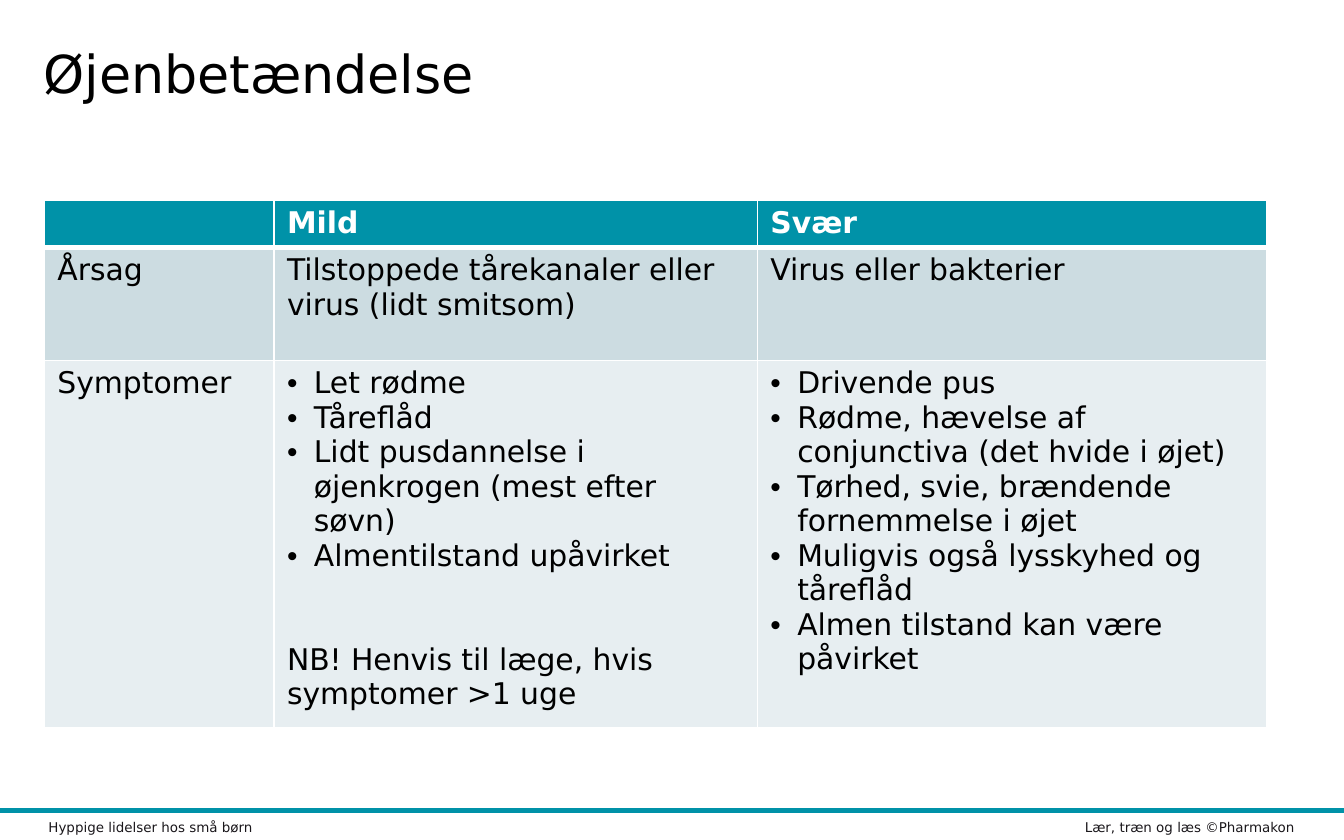
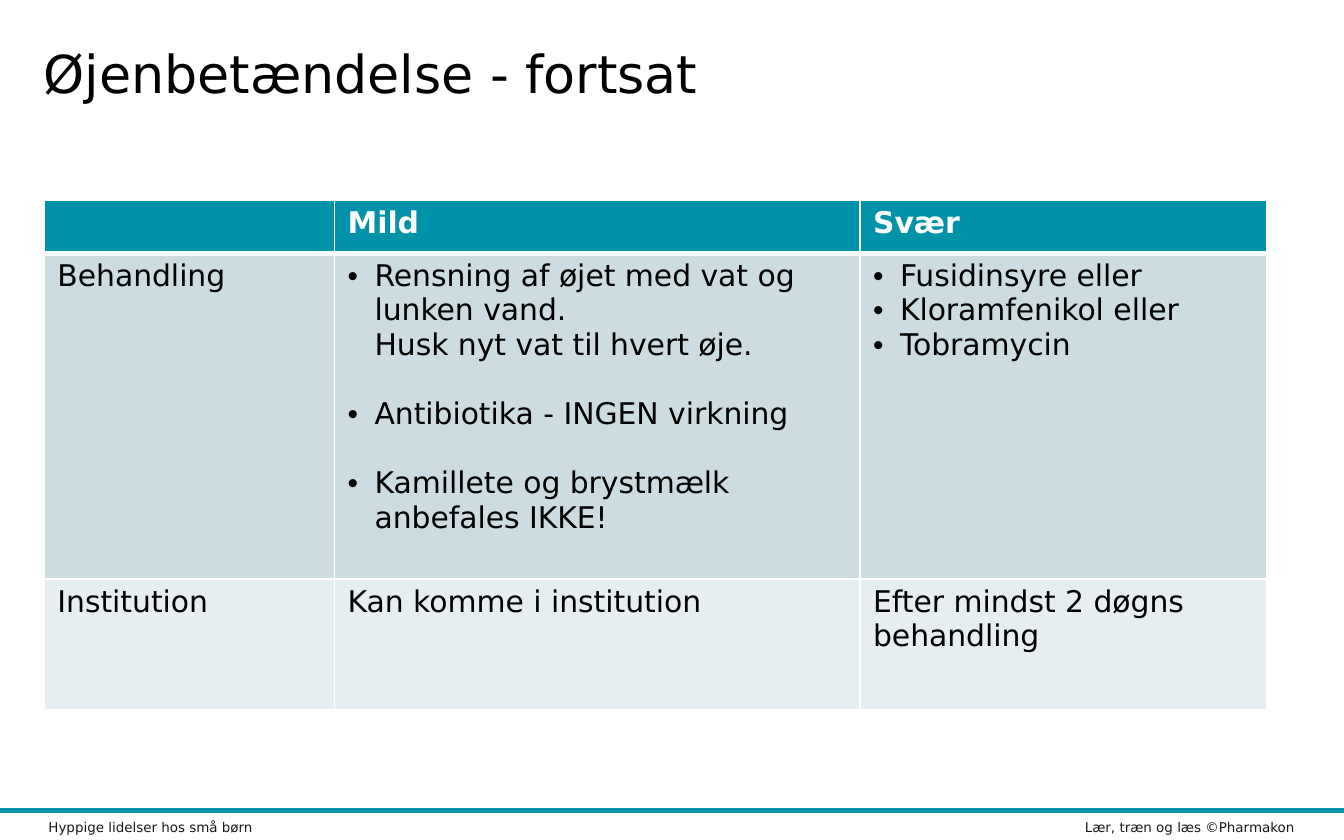
from dataclasses import dataclass

import lxml.etree
import pptx
import pptx.dml.color
import pptx.enum.shapes
import pptx.enum.text
import pptx.oxml.ns
import pptx.util

Pt = pptx.util.Pt
qn = pptx.oxml.ns.qn


@dataclass(frozen=True)
class Theme:
    font: str = "DejaVu Sans"
    teal: str = "0092A8"
    band_dark: str = "CCDCE1"
    band_light: str = "E7EEF1"
    white: str = "FFFFFF"
    black: str = "000000"
    footer: str = "1A171B"
    title_size: float = 28
    body_size: float = 16
    footer_size: float = 7.2
    line_height: float = 18.6
    indent: float = 14.4


@dataclass
class Item:
    """A paragraph in a cell, with a number of free lines above it."""
    text: str
    bullet: bool = True
    lines_above: int = 0


def rgb(color):
    return pptx.dml.color.RGBColor.from_string(color)


class Deck:
    def __init__(self, theme):
        self.theme = theme
        self.prs = pptx.Presentation()
        self.prs.slide_width, self.prs.slide_height = Pt(720), Pt(450)
        self.slide = None

    def add_slide(self, title):
        self.slide = self.prs.slides.add_slide(self.prs.slide_layouts[5])
        self.title(title)
        self.rule(434.2)
        self.footer("Lær, træn og læs ©Pharmakon", 581.2)
        self.footer("Hyppige lidelser hos små børn", 26)

    def style(self, p, size, color, bold=False):
        p.alignment = pptx.enum.text.PP_ALIGN.LEFT
        for r in p.runs:
            r.font.name = self.theme.font
            r.font.size = Pt(size)
            r.font.bold = bold
            r.font.color.rgb = rgb(color)

    def title(self, text):
        sp = self.slide.shapes.title
        sp.left, sp.top, sp.width, sp.height = Pt(23.3), Pt(22), Pt(617), Pt(74)
        tf = sp.text_frame
        tf.margin_left = tf.margin_right = tf.margin_top = tf.margin_bottom = 0
        tf.vertical_anchor = pptx.enum.text.MSO_ANCHOR.TOP
        tf.auto_size = pptx.enum.text.MSO_AUTO_SIZE.NONE
        tf.text = text
        self.style(tf.paragraphs[0], self.theme.title_size, self.theme.black)

    def rule(self, y):
        line = self.slide.shapes.add_connector(
            pptx.enum.shapes.MSO_CONNECTOR.STRAIGHT, 0, Pt(y), Pt(720), Pt(y))
        line.line.color.rgb = rgb(self.theme.teal)
        line.line.width = Pt(3)
        lxml.etree.SubElement(line._element.spPr, qn("a:effectLst"))

    def footer(self, text, x):
        sp = self.slide.shapes.add_textbox(Pt(x), Pt(436), Pt(113), Pt(14))
        tf = sp.text_frame
        tf.margin_left = tf.margin_right = 0
        tf.margin_top = tf.margin_bottom = Pt(3.6)
        tf.vertical_anchor = pptx.enum.text.MSO_ANCHOR.MIDDLE
        tf.word_wrap = False
        tf.text = text
        self.style(tf.paragraphs[0], self.theme.footer_size, self.theme.footer)

    def table(self, widths, heights, rows):
        frame = self.slide.shapes.add_table(
            len(rows), len(widths), Pt(23.8), Pt(107.5), Pt(sum(widths)), Pt(sum(heights)))
        table = frame.table
        table.horz_banding = False
        for column, width in zip(table.columns, widths):
            column.width = Pt(width)
        for i, (row, height) in enumerate(zip(rows, heights)):
            table.rows[i].height = Pt(height)
            for j, content in enumerate(row):
                self.cell(table.cell(i, j), content, i)

    def cell(self, cell, content, row):
        theme = self.theme
        header = row == 0
        cell.margin_left = cell.margin_right = Pt(7)
        cell.margin_top = cell.margin_bottom = Pt(3)
        cell.fill.solid()
        cell.fill.fore_color.rgb = rgb((theme.teal, theme.band_dark, theme.band_light)[row])
        self.borders(cell, top=3 if row == 1 else 1, bottom=3 if header else 1)
        items = [Item(content, bullet=False)] if isinstance(content, str) else content
        tf = cell.text_frame
        for k, item in enumerate(items):
            p = tf.paragraphs[0] if k == 0 else tf.add_paragraph()
            p.text = item.text
            if item.lines_above:
                p.space_before = Pt(item.lines_above * theme.line_height)
            if item.bullet:
                self.bullet(p)
            self.style(p, theme.body_size, theme.white if header else theme.black, header)
            self.size_breaks(p)

    def borders(self, cell, top, bottom):
        tc_pr = cell._tc.get_or_add_tcPr()
        widths = {"lnL": 1, "lnR": 1, "lnT": top, "lnB": bottom}
        for k, (tag, width) in enumerate(widths.items()):
            ln = lxml.etree.Element(qn("a:" + tag), w=str(Pt(width)))
            fill = lxml.etree.SubElement(ln, qn("a:solidFill"))
            lxml.etree.SubElement(fill, qn("a:srgbClr"), val=self.theme.white)
            tc_pr.insert(k, ln)

    def bullet(self, p):
        p_pr = p._p.get_or_add_pPr()
        indent = Pt(self.theme.indent)
        p_pr.set("marL", str(indent))
        p_pr.set("indent", str(-indent))
        lxml.etree.SubElement(p_pr, qn("a:buFont"), typeface="Arial")
        lxml.etree.SubElement(p_pr, qn("a:buChar"), char="•")

    def size_breaks(self, p):
        """Give line breaks and the paragraph end the body size, so lines keep their height."""
        size = str(int(self.theme.body_size * 100))
        for br in p._p.findall(qn("a:br")):
            lxml.etree.SubElement(br, qn("a:rPr"), sz=size)
        lxml.etree.SubElement(p._p, qn("a:endParaRPr"), sz=size)


def main():
    deck = Deck(Theme())
    header = ["", "Mild", "Svær"]

    deck.add_slide("Øjenbetændelse")
    deck.table([123, 259, 273], [24.5, 60.5, 191], [
        header,
        ["Årsag", "Tilstoppede tårekanaler eller virus (lidt smitsom)",
         "Virus eller bakterier"],
        ["Symptomer",
         [Item("Let rødme"),
          Item("Tåreflåd"),
          Item("Lidt pusdannelse i øjenkrogen (mest efter søvn)"),
          Item("Almentilstand upåvirket"),
          Item("NB! Henvis til læge, hvis symptomer >1 uge", bullet=False, lines_above=2)],
         [Item("Drivende pus"),
          Item("Rødme, hævelse af conjunctiva (det hvide i øjet)"),
          Item("Tørhed, svie, brændende fornemmelse i øjet"),
          Item("Muligvis også lysskyhed og tåreflåd"),
          Item("Almen tilstand kan være påvirket")]],
    ])

    deck.add_slide("Øjenbetændelse - fortsat")
    deck.table([155.5, 281.5, 218], [28.2, 174.5, 70], [
        header,
        ["Behandling",
         [Item("Rensning af øjet med vat og lunken vand.\vHusk nyt vat til hvert øje."),
          Item("Antibiotika - INGEN virkning", lines_above=1),
          Item("Kamillete og brystmælk anbefales IKKE!", lines_above=1)],
         [Item("Fusidinsyre eller"),
          Item("Kloramfenikol eller"),
          Item("Tobramycin")]],
        ["Institution", "Kan komme i institution", "Efter mindst 2 døgns behandling"],
    ])

    deck.prs.save("out.pptx")


if __name__ == "__main__":
    main()
